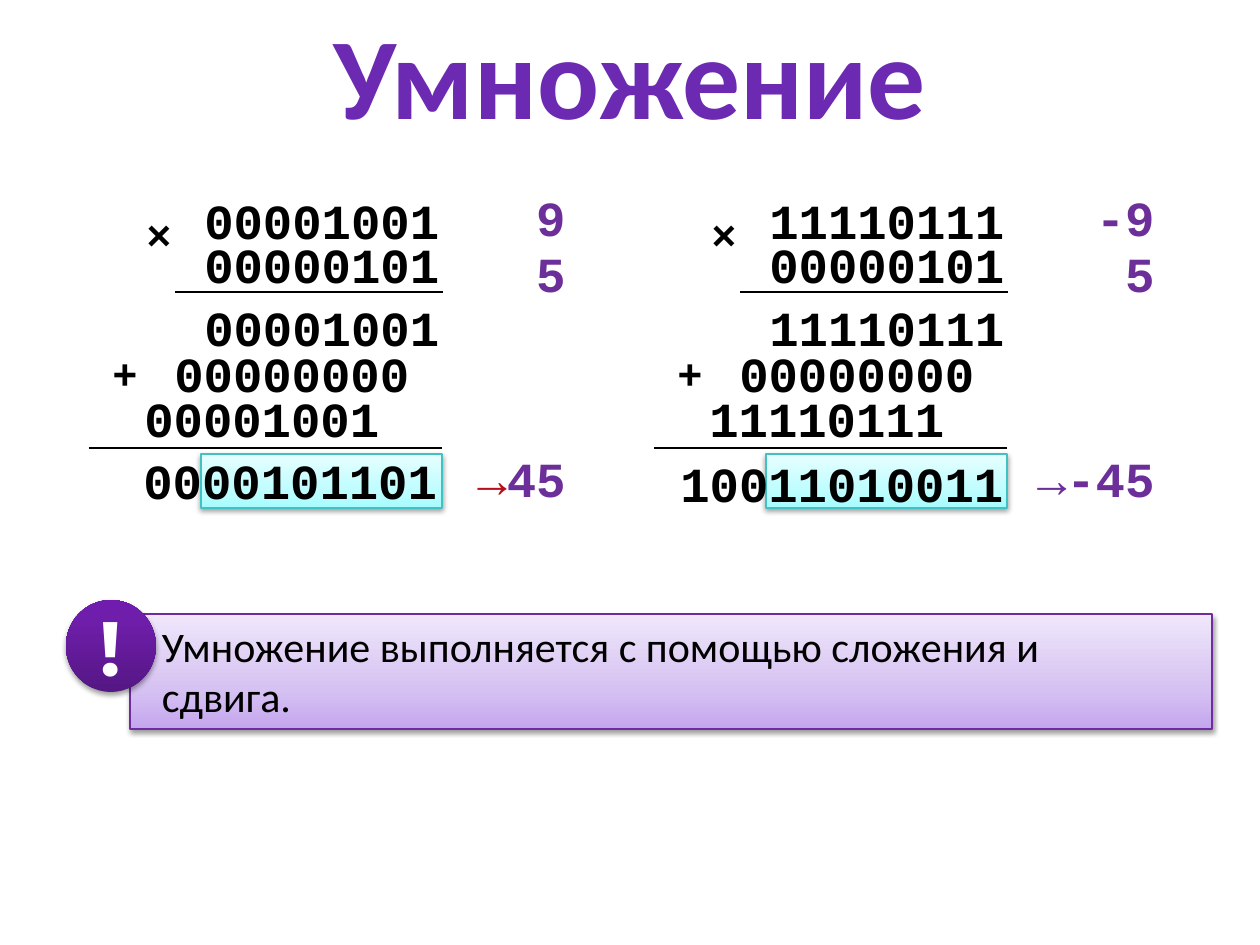
import copy

import pptx
import pptx.dml.color
import pptx.enum.shapes
import pptx.enum.text
import pptx.oxml
import pptx.oxml.ns
import pptx.util

PX = 914400 / 126
ALIGN = pptx.enum.text.PP_ALIGN
ANCHOR = pptx.enum.text.MSO_ANCHOR
SHAPE = pptx.enum.shapes.MSO_SHAPE
COLOURS = {
    "black": "000000", "white": "FFFFFF", "title": "6C29B2",
    "purple": "6C2F9A", "red": "B6101C",
    "cyan line": "42C1C4", "note line": "6E2C9F",
}
GRADIENTS = {
    "cyan": [(0, "A6FCFF"), (35, "C0FDFF"), (100, "E7FEFF")],
    "note": [(0, "C5A6EE"), (35, "D6C2F2"), (100, "EFE7FB")],
    "badge": [(0, "551784"), (80, "6F1EAB"), (100, "701CAF")],
}


def write(shape, lines, size, align=ALIGN.LEFT, font="Courier New", bold=True,
          spacing=None, **frame_format):
    """Fill a shape with paragraphs, each a list of (text, colour) runs."""
    frame = shape.text_frame
    frame_format = {"word_wrap": False, "vertical_anchor": ANCHOR.TOP} | frame_format
    for name, value in frame_format.items():
        setattr(frame, name, value)
    for index, pieces in enumerate(lines):
        paragraph = frame.add_paragraph() if index else frame.paragraphs[0]
        paragraph.alignment = align
        paragraph.line_spacing = spacing
        for text, colour in pieces:
            if text == "\v":
                paragraph.add_line_break()
                continue
            run = paragraph.add_run()
            run.text = text
            run_format = {"name": font, "size": pptx.util.Pt(size), "bold": bold}
            for name, value in run_format.items():
                setattr(run.font, name, value)
            run.font.color.rgb = pptx.dml.color.RGBColor.from_string(COLOURS[colour])


def add_panel(shapes, kind, box, gradient, line=None):
    """Add a shape with a vertical gradient and a soft shadow below it."""
    panel = shapes.add_shape(kind, *[round(length * PX) for length in box])
    panel.fill.gradient()
    panel.fill.gradient_angle = 90
    stop_list = panel.fill._fill._gradFill.find(pptx.oxml.ns.qn("a:gsLst"))
    stop_list.insert(1, copy.deepcopy(stop_list[0]))
    for stop, (position, colour) in zip(panel.fill.gradient_stops, GRADIENTS[gradient]):
        stop.position = position / 100
        stop.color.rgb = pptx.dml.color.RGBColor.from_string(colour)
    if line:
        panel.line.color.rgb = pptx.dml.color.RGBColor.from_string(COLOURS[line])
        panel.line.width = pptx.util.Pt(0.75)
    else:
        panel.line.fill.background()
    panel.shadow.inherit = False
    effects = panel._element.spPr.find(pptx.oxml.ns.qn("a:effectLst"))
    effects.append(pptx.oxml.parse_xml(
        f'<a:outerShdw {pptx.oxml.ns.nsdecls("a")} blurRad="40000" dist="20000" '
        'dir="5400000" rotWithShape="0"><a:srgbClr val="000000">'
        '<a:alpha val="38000"/></a:srgbClr></a:outerShdw>'))
    return panel


presentation = pptx.Presentation()
presentation.slide_width = round(1260 * PX)
presentation.slide_height = round(945 * PX)
slide = presentation.slides.add_slide(presentation.slide_layouts[6])
shapes = slide.shapes

title = shapes.add_textbox(*[round(length * PX) for length in (63, 0, 1134, 147)])
write(title, [[("Умножение", "title")]], 66, ALIGN.CENTER, "Calibri",
      word_wrap=True, vertical_anchor=ANCHOR.MIDDLE)

# Each column: left shift, first factor, product with its box, and decimal values
columns = [
    {"shift": 0, "factor": "00001001", "product": "0000101101",
     "product box": (131, 444, 321, 72), "decimals": ("9", "5", "45"),
     "right": 578, "widths": (55, 134), "arrow": "red"},
    {"shift": 565, "factor": "11110111", "product": "10011010011",
     "product box": (668, 447, 352, 72), "decimals": ("-9", "5", "-45"),
     "right": 1167, "widths": (84, 164), "arrow": "purple"},
]
for column in columns:
    shift, factor = column["shift"], column["factor"]
    add_panel(shapes, SHAPE.RECTANGLE, (201 + shift, 454, 241, 54), "cyan", "cyan line")

    texts = [
        (factor, (192 + shift, 184, 262, 72), 28),
        ("00000101", (192 + shift, 228, 262, 72), 28),
        (factor, (192 + shift, 291, 262, 72), 28),
        ("00000000", (162 + shift, 337, 262, 72), 28),
        (factor, (132 + shift, 382, 262, 72), 28),
        (column["product"], column["product box"], 28),
        ("×", (134 + shift, 202, 49, 64), 24),
        ("+", (100 + shift, 341, 50, 64), 24),
    ]
    for text, box, size in texts:
        textbox = shapes.add_textbox(*[round(length * PX) for length in box])
        write(textbox, [[(text, "black")]], size)

    for start, end, top in [(175, 443, 292), (89, 442, 448)]:
        rule = shapes.add_connector(
            pptx.enum.shapes.MSO_CONNECTOR.STRAIGHT,
            *[round(length * PX) for length in (start + shift, top, end + shift, top)])
        rule.line.color.rgb = pptx.dml.color.RGBColor.from_string(COLOURS["black"])
        rule.line.width = pptx.util.Pt(1.5)
        rule._element.spPr.append(pptx.oxml.parse_xml(
            f'<a:effectLst {pptx.oxml.ns.nsdecls("a")}/>'))

    first, second, result = column["decimals"]
    factor_lines = [[(first, "purple")], [(second, "purple")]]
    result_lines = [[("→", column["arrow"]), (result, "purple")]]
    for lines, top, width, height in [
        (factor_lines, 186, column["widths"][0], 126),
        (result_lines, 447, column["widths"][1], 69),
    ]:
        box = (column["right"] - width, top, width, height)
        textbox = shapes.add_textbox(*[round(length * PX) for length in box])
        write(textbox, lines, 28, ALIGN.RIGHT, spacing=0.95)

callout = shapes.add_group_shape()
note = add_panel(callout.shapes, SHAPE.RECTANGLE, (130, 614, 1082, 115), "note", "note line")
write(note, [[("Умножение выполняется с помощью сложения и", "black"), ("\v", None),
              ("сдвига.", "black")]],
      24, font="Calibri", bold=False, word_wrap=True, margin_left=round(32 * PX))
badge = add_panel(callout.shapes, SHAPE.OVAL, (66, 600, 90, 92), "badge")
write(badge, [[("!", "white")]], 44, ALIGN.CENTER, "Montserrat",
      vertical_anchor=ANCHOR.MIDDLE)

presentation.save("out.pptx")
